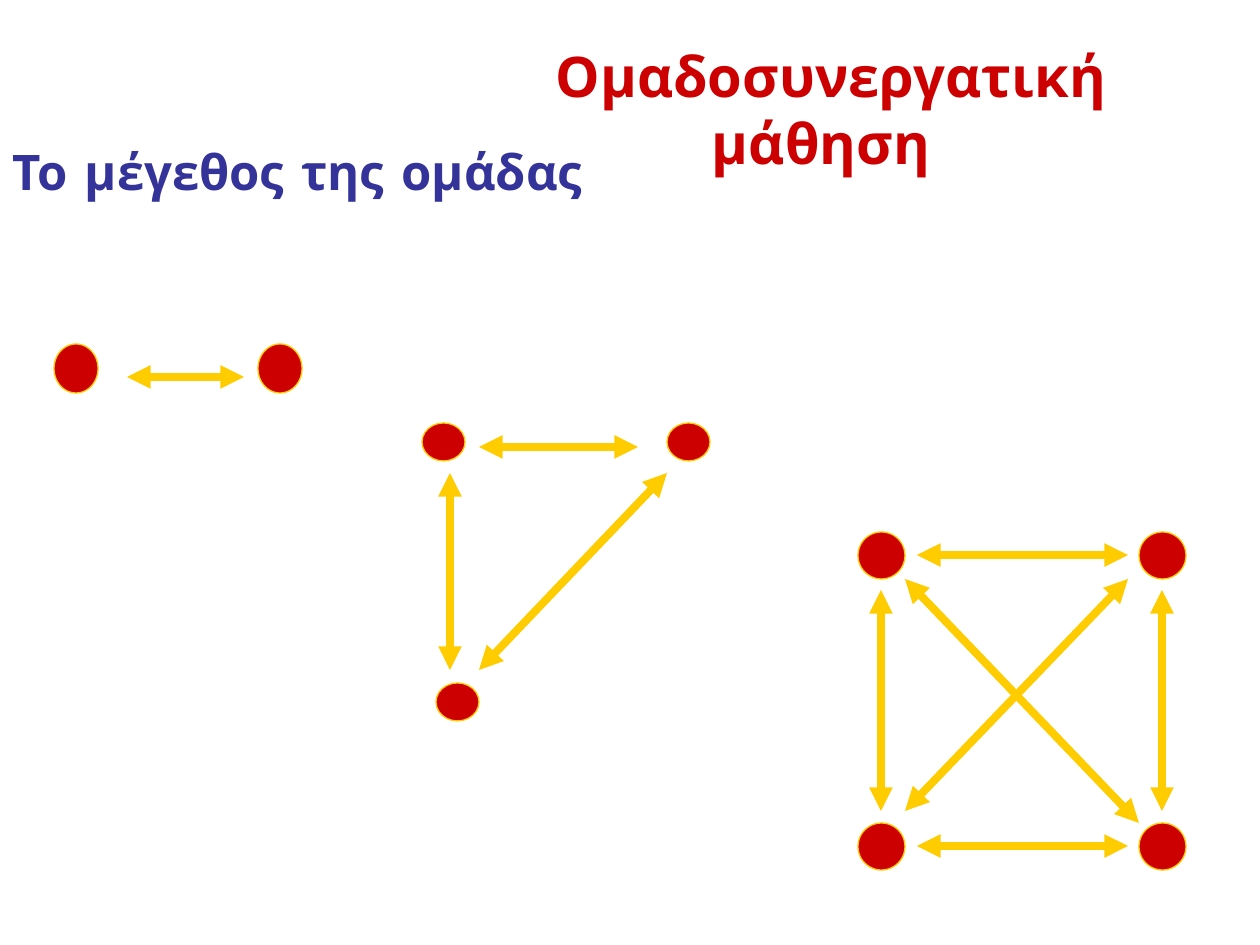
from itertools import product
from lxml.etree import SubElement
from pptx import Presentation
from pptx.dml.color import RGBColor
from pptx.enum.shapes import MSO_CONNECTOR, MSO_SHAPE
from pptx.enum.text import MSO_ANCHOR, PP_ALIGN
from pptx.oxml.ns import qn
from pptx.util import Emu, Pt

FONT = "Comic Neue"
RED, GOLD, BLUE = "CC0000", "FFCC00", "333399"


def px(num):
    """Turn pixels into EMU."""
    return Emu(round(num * 914400 / 126))


def paint(form, tone):
    """Give a fill, line or font colour format a solid colour."""
    if hasattr(form, "solid"):
        form.solid()
        form = form.fore_color
    else:
        form = form.color
    form.rgb = RGBColor.from_string(tone)


def write(slide, box, text, size, tone, align):
    """Place one bold heading in its box."""
    frame = slide.shapes.add_textbox(*map(px, box)).text_frame
    frame.word_wrap = True
    frame.vertical_anchor = MSO_ANCHOR.TOP
    frame.text = text
    para = frame.paragraphs[0]
    para.alignment = align
    font = para.runs[0].font
    font.name, font.size, font.bold = FONT, Pt(size), True
    paint(font, tone)


def add_dot(group, left, top, width, height):
    """Add one group member as an outlined ellipse."""
    dot = group.shapes.add_shape(MSO_SHAPE.OVAL, *map(px, (left, top, width, height)))
    dot.shadow.inherit = False
    paint(dot.fill, RED)
    paint(dot.line, GOLD)
    dot.line.width = Pt(0.75)


def add_arrow(group, ends):
    """Add one double-headed arrow."""
    link = group.shapes.add_connector(MSO_CONNECTOR.STRAIGHT, *map(px, ends))
    paint(link.line, GOLD)
    link.line.width = Pt(4.5)
    line = link.line._get_or_add_ln()
    for end in ("a:headEnd", "a:tailEnd"):
        SubElement(line, qn(end), type="triangle")
    SubElement(link._element.spPr, qn("a:effectLst"))


def add_team(slide, box, size, dots, arrows):
    """Draw a team of dots and arrows relative to its corner."""
    left, top = box
    group = slide.shapes.add_group_shape()
    for x, y in dots:
        add_dot(group, left + x, top + y, *size)
    for x1, y1, x2, y2 in arrows:
        add_arrow(group, (left + x1, top + y1, left + x2, top + y2))


def main():
    """Build and save the slide."""
    deck = Presentation()
    deck.slide_width, deck.slide_height = px(1260), px(945)
    slide = deck.slides.add_slide(deck.slide_layouts[6])
    write(slide, (471, 35, 720, 147), "Ομαδοσυνεργατική μάθηση ", 32, RED, PP_ALIGN.CENTER)
    write(slide, (0, 135, 1186, 72), "Το μέγεθος της ομάδας", 28, BLUE, PP_ALIGN.LEFT)
    add_team(slide, (54, 344), (44, 49), [(0, 0), (204, 0)], [(73, 33, 190, 33)])
    add_team(
        slide, (422, 423), (43, 38), [(0, 0), (245, 0), (14, 260)],
        [(57, 24, 216, 24), (28, 50, 28, 247), (245, 50, 57, 247)],
    )
    rows = [(59, y, 270, y) for y in (23, 314)]
    cols = [(x, 58, x, 279) for x in (23, 304)]
    cross = [(47, 47, 281, 291), (270, 47, 47, 279)]
    add_team(slide, (858, 532), (47, 47), product((0, 281), (0, 291)), rows + cols + cross)
    deck.save("out.pptx")


if __name__ == "__main__":
    main()
